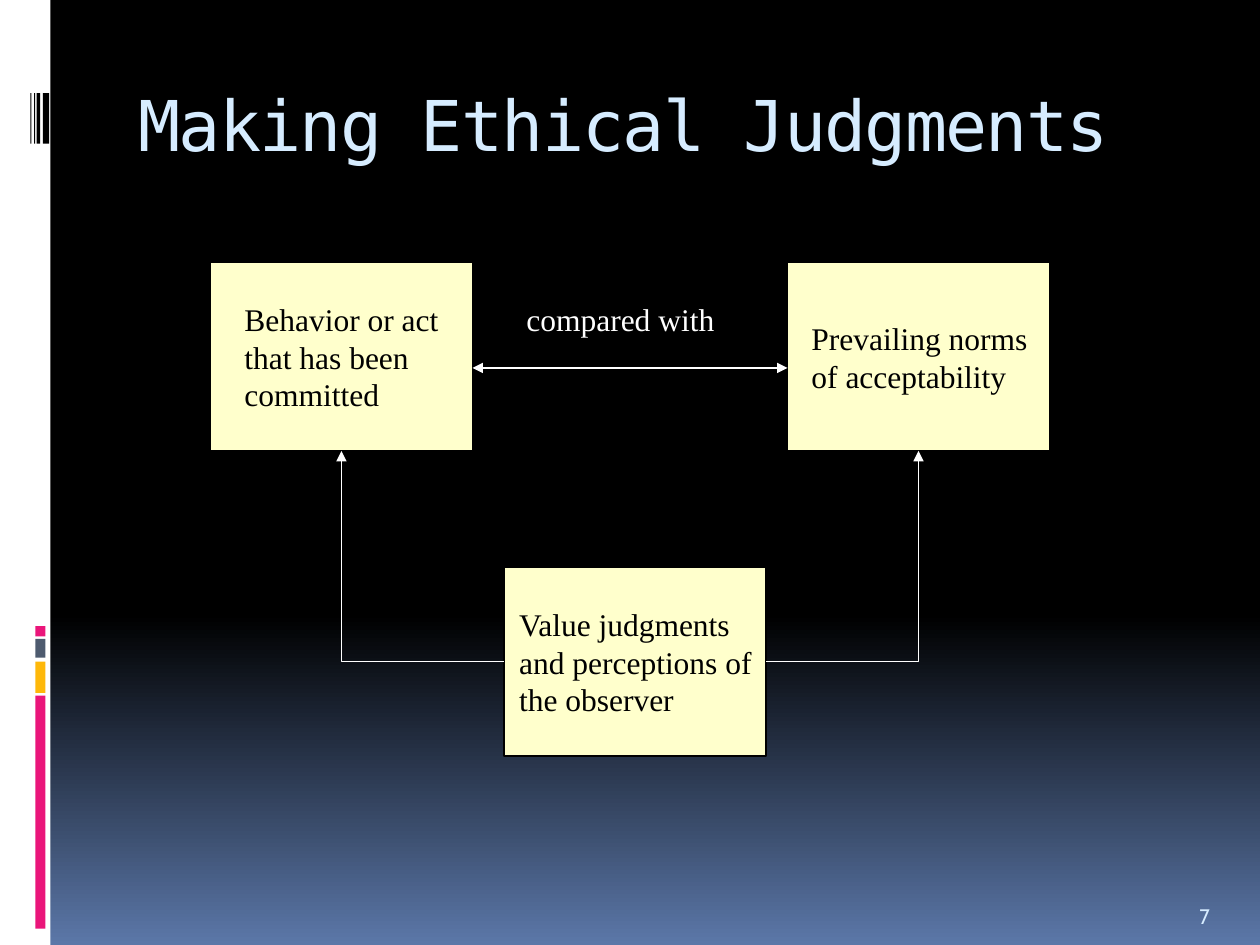
from lxml import etree
from pptx import Presentation
from pptx.dml.color import RGBColor
from pptx.enum import shapes, text
from pptx.oxml.ns import qn
from pptx.util import Inches, Pt

COLORS = {
    "black": "000000", "white": "FFFFFF", "blue": "5B77A8", "pale": "D6ECFF",
    "pink": "EA157A", "amber": "FEB80A", "slate": "4E5B6F", "cream": "FFFFCC",
}
COLORS = {name: RGBColor.from_string(value) for name, value in COLORS.items()}
SERIF = "Times New Roman"

deck = Presentation()
deck.slide_width, deck.slide_height = Inches(10), Inches(7.5)
page = deck.slides.add_slide(deck.slide_layouts[6])


def add_box(left, top, width, height, color):
    box = page.shapes.add_shape(shapes.MSO_SHAPE.RECTANGLE, Inches(left),
                                Inches(top), Inches(width), Inches(height))
    box.shadow.inherit = False
    box.fill.solid()
    box.fill.fore_color.rgb = COLORS[color]
    box.line.fill.background()
    return box


def write(box, words, size, font, color, anchor):
    frame = box.text_frame
    frame.word_wrap = True
    frame.vertical_anchor = anchor
    para = frame.paragraphs[0]
    para.text = words
    para.alignment = text.PP_ALIGN.LEFT
    para.font.size = Pt(size)
    para.font.name = font
    para.font.color.rgb = COLORS[color]


# Background: black down to 65 %, then fading to blue
fill = page.background.fill
fill.gradient()
fill.gradient_angle = 270
for stop, position, color in zip(fill.gradient_stops, (0.65, 1), ("black", "blue")):
    stop.position = position
    stop.color.rgb = COLORS[color]

# Side strip with coloured blocks and thin bars
add_box(0, 0, 0.4, 7.5, "white")
for top, height, color in ((5.52, 1.85, "pink"), (5.25, 0.25, "amber"),
                           (5.07, 0.15, "slate"), (4.97, 0.08, "pink")):
    add_box(0.28, top, 0.08, height, color)
for left, width in ((0.34, 0.05), (0.29, 0.03), (0.27, 0.01), (0.24, 0.01)):
    add_box(left, 0.74, width, 0.4, "black")

# Title, page number and label between the upper boxes
TOP, MIDDLE, BOTTOM = (text.MSO_ANCHOR.TOP, text.MSO_ANCHOR.MIDDLE,
                       text.MSO_ANCHOR.BOTTOM)
for left, top, width, height, *style in (
    (1, 0.6, 8.5, 1, "Making Ethical Judgments", 40, "DejaVu Sans Mono", "pale", TOP),
    (9.42, 7.02, 0.5, 0.4, "7", 12, "Cabin", "pale", BOTTOM),
    (4.08, 2.33, 1.83, 0.4, "compared with", 18, SERIF, "white", TOP),
):
    label = page.shapes.add_textbox(Inches(left), Inches(top),
                                    Inches(width), Inches(height))
    write(label, *style)
    if style[1] == 40:
        span = label.text_frame.paragraphs[0].runs[0]
        span.font._element.set("spc", "-100")

# Concept boxes
concepts = []
for left, top, inset, words in (
    (1.67, 2.08, 0.27, "Behavior or act that has been committed"),
    (6.25, 2.08, 0.19, "Prevailing norms of acceptability"),
    (4, 4.5, 0.12, "Value judgments and perceptions of the observer"),
):
    box = add_box(left, top, 2.08, 1.5, "cream")
    box.line.color.rgb = COLORS["black"]
    box.line.width = Pt(1)
    write(box, words, 18, SERIF, "black", MIDDLE)
    box.text_frame.margin_left = Inches(inset)
    box.text_frame.margin_right = Inches(0.05)
    concepts.append(box)
behavior, norms, observer = concepts

# Arrows: two elbows up from the observer, one double-headed comparison
LEFT_SIDE, BOTTOM_SIDE, RIGHT_SIDE = 1, 2, 3
kinds = shapes.MSO_CONNECTOR
for kind, start, end, side, target in (
    (kinds.ELBOW, (4, 5.25), (2.71, 3.58), LEFT_SIDE, behavior),
    (kinds.ELBOW, (6.08, 5.25), (7.29, 3.58), RIGHT_SIDE, norms),
    (kinds.STRAIGHT, (3.75, 2.92), (6.25, 2.92), None, None),
):
    arrow = page.shapes.add_connector(kind, *map(Inches, start + end))
    arrow.line.color.rgb = COLORS["white"]
    arrow.line.width = Pt(1)
    properties = arrow._element.spPr
    etree.SubElement(properties, qn("a:effectLst"))
    line = properties.find(qn("a:ln"))
    if target is None:
        etree.SubElement(line, qn("a:headEnd"), type="triangle")
    else:
        properties.find(qn("a:prstGeom")).set("prst", "bentConnector2")
        arrow.begin_connect(observer, side)
        arrow.end_connect(target, BOTTOM_SIDE)
    etree.SubElement(line, qn("a:tailEnd"), type="triangle")

deck.save("out.pptx")
